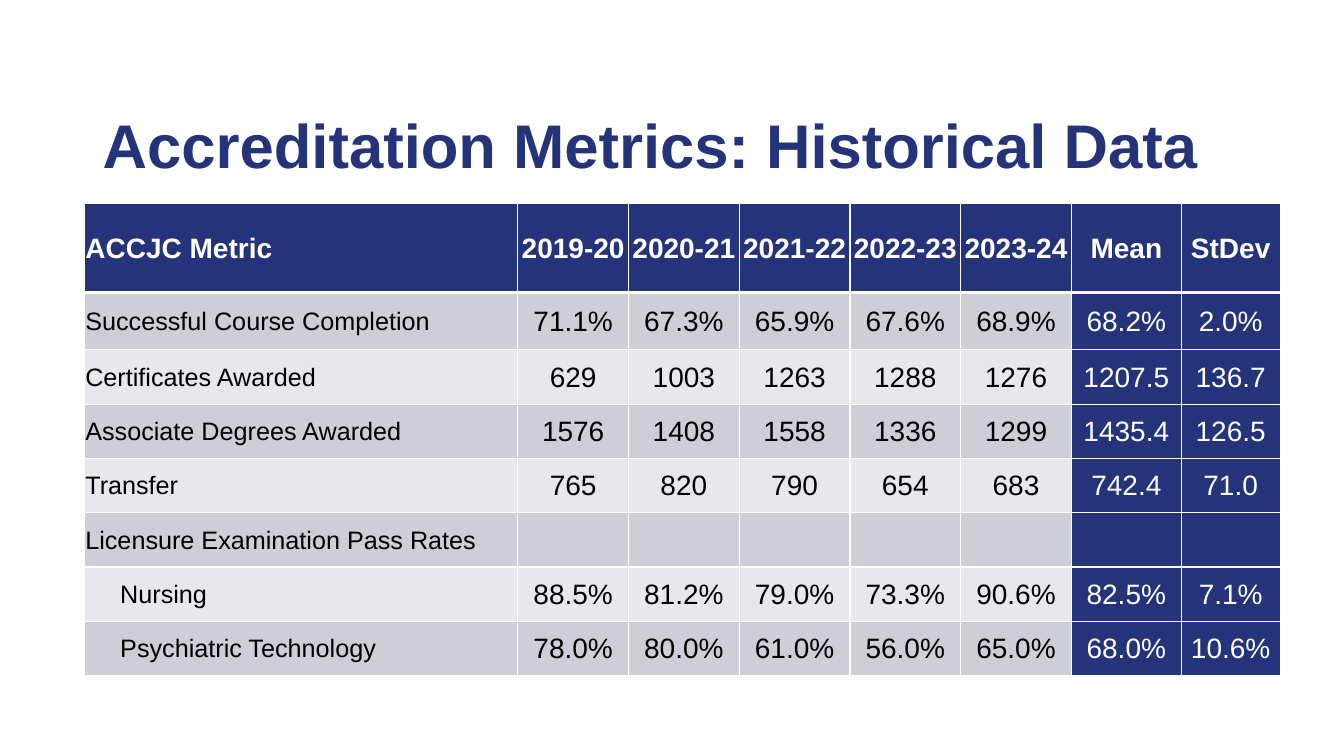
from dataclasses import dataclass

from lxml.etree import SubElement
from pptx import Presentation
from pptx.dml.color import RGBColor
from pptx.enum.text import MSO_ANCHOR as Anchor, PP_ALIGN as Align
from pptx.oxml.ns import qn
from pptx.util import Cm, Pt


@dataclass(frozen=True)
class Theme:
    """Colours, font and type sizes of the deck."""
    font: str = "Arial"
    navy: str = "25347A"
    white: str = "FFFFFF"
    black: str = "000000"
    bands: tuple = ("E8E8EC", "CDCED7")
    title_size: int = 44
    value_size: int = 20
    label_size: int = 18


THEME = Theme()
TITLE = "Accreditation Metrics: Historical Data"
HEADER = ["ACCJC Metric", "2019-20", "2020-21", "2021-22", "2022-23", "2023-24", "Mean", "StDev"]
METRICS = [
    ["Successful Course Completion", "71.1%", "67.3%", "65.9%", "67.6%", "68.9%", "68.2%", "2.0%"],
    ["Certificates Awarded", "629", "1003", "1263", "1288", "1276", "1207.5", "136.7"],
    ["Associate Degrees Awarded", "1576", "1408", "1558", "1336", "1299", "1435.4", "126.5"],
    ["Transfer", "765", "820", "790", "654", "683", "742.4", "71.0"],
    ["Licensure Examination Pass Rates"] + [""] * 7,
    ["Nursing", "88.5%", "81.2%", "79.0%", "73.3%", "90.6%", "82.5%", "7.1%"],
    ["Psychiatric Technology", "78.0%", "80.0%", "61.0%", "56.0%", "65.0%", "68.0%", "10.6%"],
]
INDENTED = {"Nursing", "Psychiatric Technology"}
FIRST_SUMMARY_COLUMN = HEADER.index("Mean")
COLUMN_WIDTHS = [10.92] + [2.79] * 5 + [2.77, 2.49]
ROW_HEIGHTS = [2.24, 1.45] + [1.37] * 6


def style_text(para, size, color, bold=False):
    """Format every run of a paragraph."""
    for span in para.runs:
        span.font.name = THEME.font
        span.font.size = Pt(size)
        span.font.bold = bold
        span.font.color.rgb = RGBColor.from_string(color)


def add_borders(cell, bottom_width):
    """Draw white rules of 1 pt around a cell, with its own bottom width."""
    properties = cell._tc.get_or_add_tcPr()
    for side, width in (("L", 1), ("R", 1), ("T", 1), ("B", bottom_width)):
        line = SubElement(properties, qn(f"a:ln{side}"), w=str(Pt(width)))
        fill = SubElement(line, qn("a:solidFill"))
        SubElement(fill, qn("a:srgbClr"), val=THEME.white)


def fill_cell(cell, text, row, column):
    """Write one table cell and style it by its row and column."""
    is_header, is_label = row == 0, column == 0
    is_navy = is_header or column >= FIRST_SUMMARY_COLUMN
    add_borders(cell, 3 if is_header else 1)
    cell.fill.solid()
    cell.fill.fore_color.rgb = RGBColor.from_string(THEME.navy if is_navy else THEME.bands[row % 2])
    cell.vertical_anchor = Anchor.MIDDLE
    cell.margin_left = Cm(0.9 if text in INDENTED else 0.02)
    cell.margin_right = cell.margin_top = Cm(0.02)
    cell.margin_bottom = 0
    cell.text_frame.text = text
    para = cell.text_frame.paragraphs[0]
    para.alignment = Align.LEFT if is_label else Align.CENTER
    size = THEME.label_size if is_label and not is_header else THEME.value_size
    style_text(para, size, THEME.white if is_navy else THEME.black, is_header)


def add_title(page, left, top, width, height):
    """Place the slide title at the bottom of its box."""
    box = page.shapes.add_textbox(left, top, width, height)
    frame = box.text_frame
    frame.word_wrap = True
    frame.vertical_anchor = Anchor.BOTTOM
    frame.text = TITLE
    para = frame.paragraphs[0]
    para.line_spacing = 0.9
    style_text(para, THEME.title_size, THEME.navy, True)


def add_metrics_table(page, left, top, width, height):
    """Place the metrics table, sharing its box out by column and row weights."""
    rows = [HEADER] + METRICS
    table = page.shapes.add_table(len(rows), len(HEADER), left, top, width, height).table
    for column, share in zip(table.columns, COLUMN_WIDTHS):
        column.width = round(width * share / sum(COLUMN_WIDTHS))
    for row, share in zip(table.rows, ROW_HEIGHTS):
        row.height = round(height * share / sum(ROW_HEIGHTS))
    for row, texts in enumerate(rows):
        for column, text in enumerate(texts):
            fill_cell(table.cell(row, column), text, row, column)


def main():
    """Build the deck and save it."""
    deck = Presentation()
    deck.slide_width, deck.slide_height = Cm(33.87), Cm(19.05)
    page = deck.slides.add_slide(deck.slide_layouts[6])
    add_title(page, Cm(2.34), Cm(1.02), Cm(29.21), Cm(3.68))
    add_metrics_table(page, Cm(2.13), Cm(5.13), Cm(30.13), Cm(11.9))
    deck.save("out.pptx")


if __name__ == "__main__":
    main()
